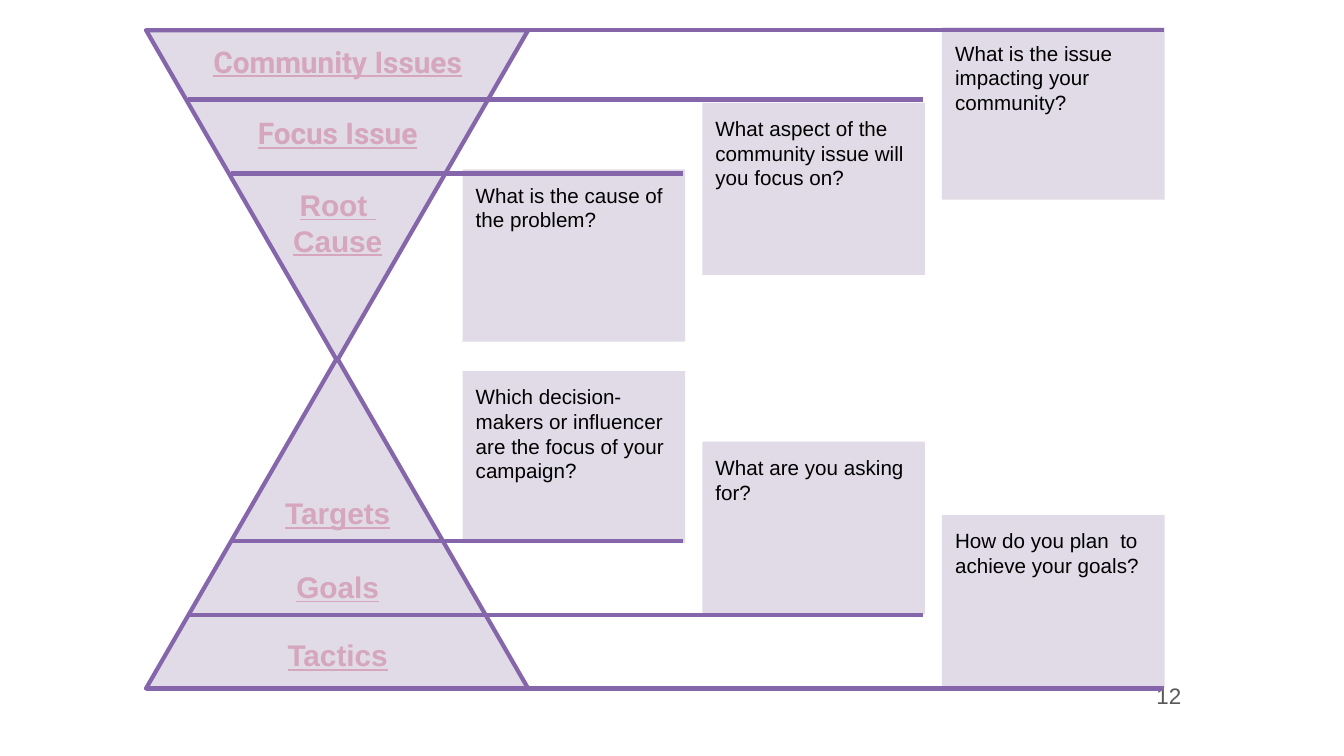
from lxml.etree import SubElement
from pptx import Presentation
from pptx.dml.color import RGBColor
from pptx.enum.shapes import MSO_CONNECTOR, MSO_SHAPE
from pptx.enum.text import MSO_ANCHOR, PP_ALIGN
from pptx.oxml.ns import qn
from pptx.util import Cm, Pt

COLORS = {"fill": "E0DBE6", "line": "8566AA", "label": "D5A6BD",
          "text": "000000", "number": "595959"}
LINE_WIDTH = Pt(3)
QUESTION = {"name": "Arial", "size": Pt(14.7)}
LABEL = {"name": "Arial", "size": Pt(21.3), "bold": True, "underline": True}
ROBOTO_LABEL = {**LABEL, "name": "Roboto"}
NUMBER = {"name": "Arial", "size": Pt(16)}

ROWS = [
    ("Targets", LABEL, 12.14, 13.64, 2,
     "Which decision-makers or influencer are the focus of your campaign?", 9.35),
    ("Goals", LABEL, 14, 15.49, 1, "What are you asking for?", 11.13),
    ("Tactics", LABEL, 15.72, 17.35, 0,
     "How do you plan  to achieve your goals?", 12.98),
    ("Root \nCause", LABEL, 4.37, 4.37, 2,
     "What is the cause of the problem?", 4.27),
    ("Focus Issue", ROBOTO_LABEL, 2.57, 2.51, 1,
     "What aspect of the community issue will you focus on?", 2.59),
    ("Community Issues", ROBOTO_LABEL, 0.76, 0.76, 0,
     "What is the issue impacting your community?", 0.69),
]


class HourglassSlide:
    """Draws the elements of the hourglass planning slide in one style."""

    def __init__(self, prs):
        self.s = prs.slides.add_slide(prs.slide_layouts[6])

    def color(self, name):
        return RGBColor.from_string(COLORS[name])

    def shape(self, kind, *box):
        sp = self.s.shapes.add_shape(kind, *map(Cm, box))
        sp.shadow.inherit = False
        sp.fill.solid()
        sp.fill.fore_color.rgb = self.color("fill")
        sp.line.fill.background()
        return sp

    def put_text(self, sp, text, font, color, align, inset=0.33, anchor=MSO_ANCHOR.TOP):
        tf = sp.text_frame
        frame = {"word_wrap": True, "vertical_anchor": anchor}
        for side in ("left", "top", "right", "bottom"):
            frame[f"margin_{side}"] = Cm(inset)
        for key, value in frame.items():
            setattr(tf, key, value)
        p = tf.paragraphs[0]
        p.text = text
        p.alignment = align
        for r in p.runs:
            for key, value in font.items():
                setattr(r.font, key, value)
            r.font.color.rgb = self.color(color)

    def question(self, text, left, top):
        sp = self.shape(MSO_SHAPE.RECTANGLE, left, top, 5.61, 4.34)
        self.put_text(sp, text, QUESTION, "text", PP_ALIGN.LEFT)

    def triangle(self, top, rotation):
        sp = self.shape(MSO_SHAPE.ISOSCELES_TRIANGLE, 3.68, top, 9.63, 8.33)
        sp.rotation = rotation
        sp.line.color.rgb = self.color("line")
        sp.line.width = LINE_WIDTH

    def text_box(self, box, *args, **kwargs):
        sp = self.s.shapes.add_textbox(*map(Cm, box))
        self.put_text(sp, *args, **kwargs)

    def line(self, x1, x2, y):
        sp = self.s.shapes.add_connector(
            MSO_CONNECTOR.STRAIGHT, Cm(x1), Cm(y), Cm(x2), Cm(y))
        sp.line.color.rgb = self.color("line")
        sp.line.width = LINE_WIDTH
        SubElement(sp._element.spPr, qn("a:effectLst"))


def main():
    prs = Presentation()
    prs.slide_width, prs.slide_height = Cm(33.87), Cm(19.05)
    slide = HourglassSlide(prs)
    for *_, level, question, top in ROWS:
        slide.question(question, 23.74 - 6.04 * level, top)
    slide.text_box((28.5, 16.71, 1.68, 1.65), "12", NUMBER, "number",
                   PP_ALIGN.RIGHT, inset=0.41, anchor=MSO_ANCHOR.MIDDLE)
    for top, rotation in ((9.02, 0), (0.76, 180)):
        slide.triangle(top, rotation)
    for label, font, top, *_ in ROWS:
        slide.text_box((4.75, top, 7.52, 1.75), label, font, "label", PP_ALIGN.CENTER)
    for _, _, _, y, level, *_ in ROWS:
        slide.line(29.34 - 6.07 * level, 3.68 + 1.07 * level, y)
    prs.save("out.pptx")


if __name__ == "__main__":
    main()
